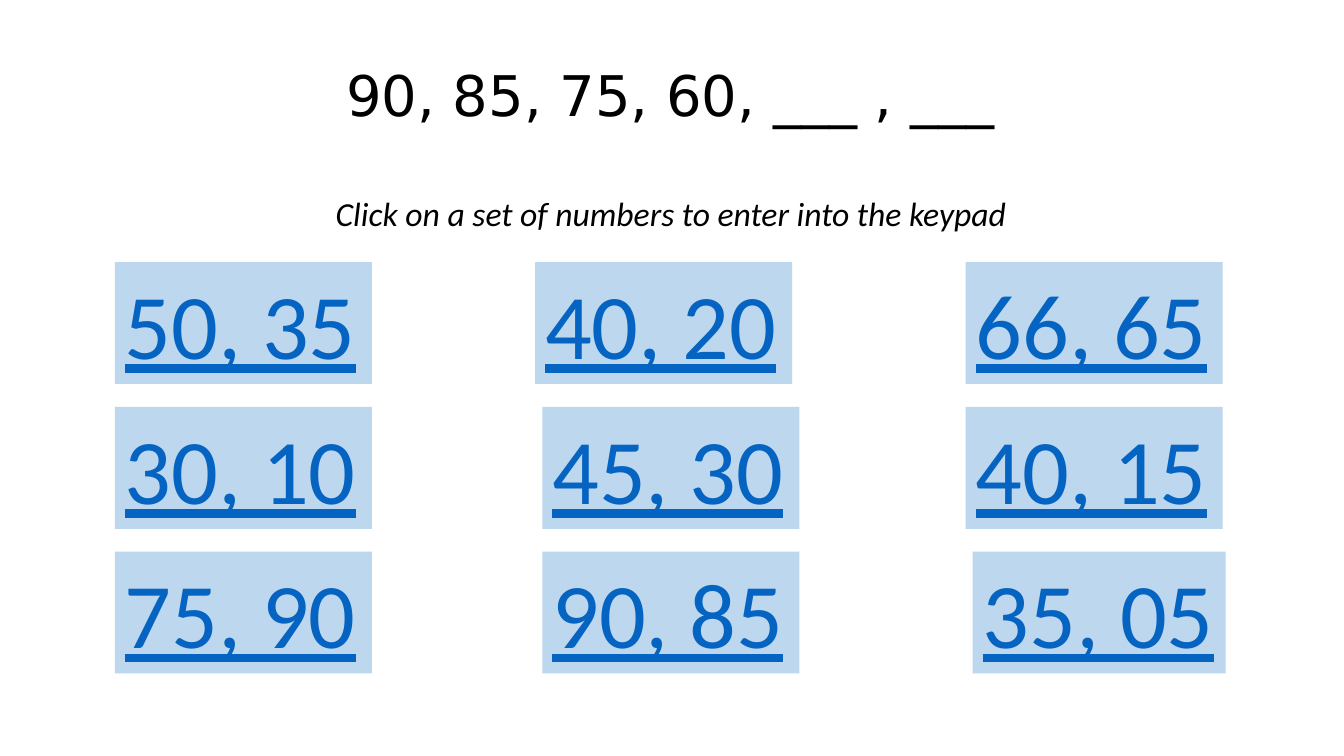
import pptx
import pptx.dml.color
import pptx.enum.text
import pptx.util

Pt = pptx.util.Pt
COLORS = {"text": "000000", "button": "BDD7EE", "link": "0563C1"}

deck = pptx.Presentation()
deck.slide_width, deck.slide_height = Pt(960), Pt(540)
page = deck.slides.add_slide(deck.slide_layouts[6])


def add_text(text, left, top, width, height, size, color, font="Calibri"):
    box = page.shapes.add_textbox(Pt(left), Pt(top), Pt(width), Pt(height))
    box.text_frame.word_wrap = True
    box.text_frame.auto_size = pptx.enum.text.MSO_AUTO_SIZE.SHAPE_TO_FIT_TEXT
    para = box.text_frame.paragraphs[0]
    span = para.add_run()
    span.text = text
    span.font.name = font
    span.font.size = Pt(size)
    span.font.color.rgb = pptx.dml.color.RGBColor.from_string(COLORS[color])
    return box, para, span


# Number sequence and instruction
box, para, span = add_text("90, 85, 75, 60, ___ , ___", 82, 39.6, 793.5, 55.5,
                           40, "text", "DejaVu Sans")
para.alignment = pptx.enum.text.PP_ALIGN.CENTER

box, para, span = add_text("Click on a set of numbers to enter into the keypad",
                           225.4, 134.6, 507.6, 36, 24, "text")
para.alignment = pptx.enum.text.PP_ALIGN.CENTER
span.font.italic = True

# Answer buttons: each column lists (answer, left, width) from top to bottom
FIRST_TOP, ROW_STEP = 187.2, 103.4
BUTTON_WIDTH, BUTTON_HEIGHT = 183.6, 87.1
answer_columns = [
    [("50, 35", 82, BUTTON_WIDTH), ("30, 10", 82, BUTTON_WIDTH), ("75, 90", 82, BUTTON_WIDTH)],
    [("40, 20", 382.3, BUTTON_WIDTH), ("45, 30", 387.4, BUTTON_WIDTH), ("90, 85", 387.4, BUTTON_WIDTH)],
    [("66, 65", 689.8, BUTTON_WIDTH), ("40, 15", 689.8, BUTTON_WIDTH), ("35, 05", 694.8, 180.7)],
]
for column in answer_columns:
    for row, (answer, left, width) in enumerate(column):
        box, para, span = add_text(answer, left, FIRST_TOP + row * ROW_STEP,
                                   width, BUTTON_HEIGHT, 66, "link")
        box.fill.solid()
        box.fill.fore_color.rgb = pptx.dml.color.RGBColor.from_string(COLORS["button"])
        span.font.underline = True

deck.save("out.pptx")
